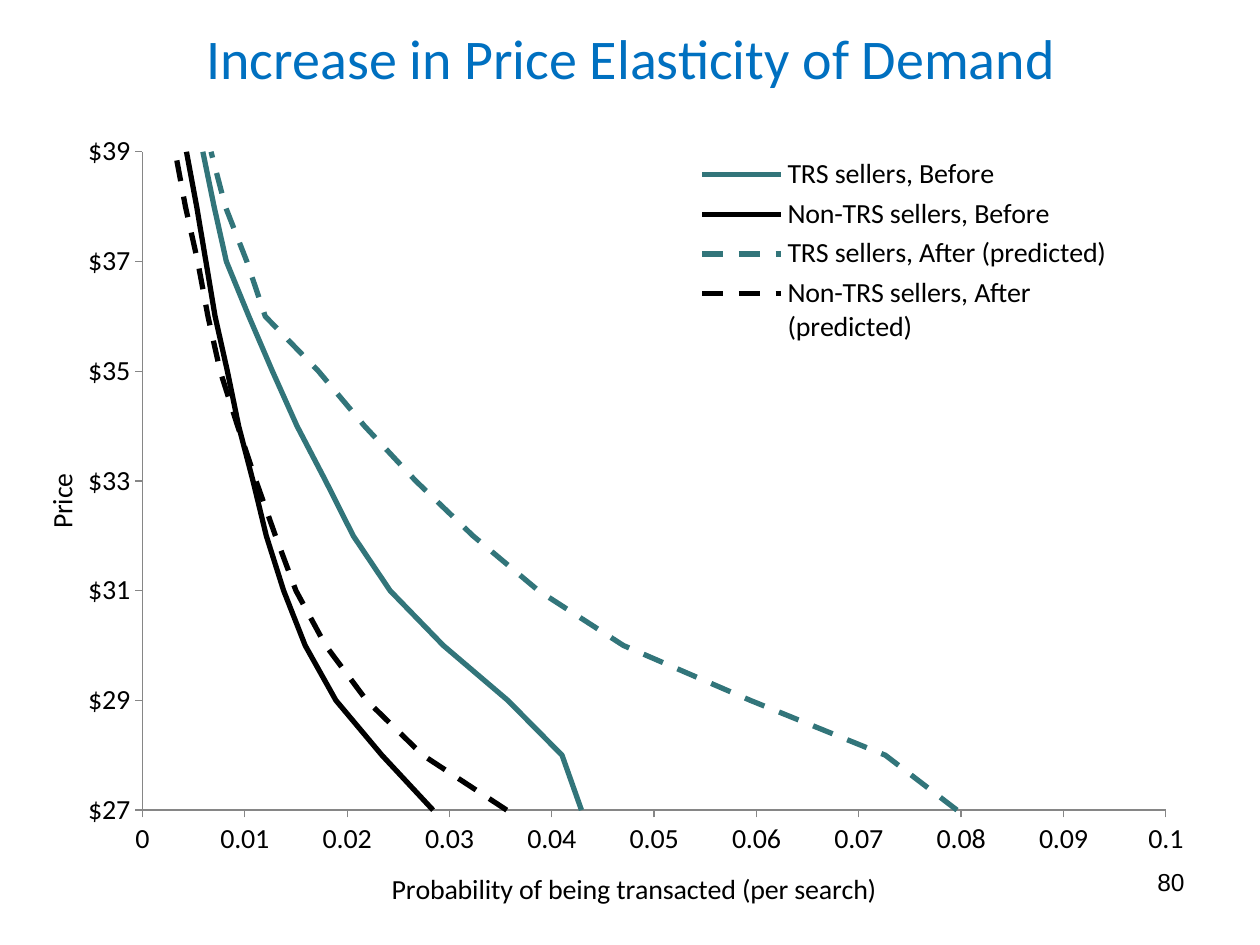
from lxml import etree
from pptx import Presentation
from pptx.chart.data import XyChartData
from pptx.dml.color import RGBColor
from pptx.enum.chart import XL_AXIS_CROSSES as Cross
from pptx.enum.chart import XL_CHART_TYPE as Kind
from pptx.enum.chart import XL_LEGEND_POSITION as Side
from pptx.enum.chart import XL_TICK_MARK as Tick
from pptx.enum.dml import MSO_LINE as Dash
from pptx.enum.text import MSO_ANCHOR as Anchor
from pptx.enum.text import PP_ALIGN as Align
from pptx.oxml.ns import qn
from pptx.util import Inches, Pt

COLORS = {"title": "0070C0", "text": "000000", "axis": "868686",
          "trs": "32757A", "non": "000000"}
PRICES = range(24, 59)
CURVES = [
    ("TRS sellers, Before", "trs", False,
     [47, 47, 44, 42.9, 41, 35.7, 29.4, 24.2, 20.6, 17.9, 15.1, 12.7, 10.4,
      8.2, 7, 5.9, 5, 4, 3, 2, 1, 1, 1, 1]),
    ("Non-TRS sellers, Before", "non", False,
     [52, 42, 34, 28.4, 23.4, 18.9, 15.9, 13.8, 12.1, 10.8, 9.4, 8.3, 7.1,
      6.2, 5.3, 4.3, 3, 2, 2, 1, 1, 1, 1, 1]),
    ("TRS sellers, After (predicted)", "trs", True,
     [92, 87, 83, 79.6, 72.6, 59.4, 47, 38.7, 32.3, 26.7, 21.7, 17.2, 12,
      10.2, 8.1, 6.7, 5, 4, 2, 1, 1, 1]),
    ("Non-TRS sellers, After (predicted)", "non", True,
     [69, 54, 44, 35.6, 27.4, 21.9, 17.9, 15, 13, 11.1, 9.3, 7.6, 6.4,
      5.4, 4.2, 3.2, 2, 1, 1, 1, 1]),
]


def color(name):
    return RGBColor.from_string(COLORS[name])


def style(font, size=16, face="Calibri", fill="text"):
    font.size, font.name, font.bold = Pt(size), face, False
    font.color.rgb = color(fill)


def add_text(slide, box, text, align=Align.LEFT, anchor=Anchor.TOP, **form):
    frame = slide.shapes.add_textbox(*map(Inches, box)).text_frame
    frame.word_wrap = True
    frame.vertical_anchor = anchor
    par = frame.paragraphs[0]
    par.alignment = align
    run = par.add_run()
    run.text = text
    style(run.font, **form)


def set_layout(node, index, inner=False, **parts):
    for old in node.findall(qn("c:layout")):
        node.remove(old)
    layout = etree.Element(qn("c:layout"))
    manual = etree.SubElement(layout, qn("c:manualLayout"))
    if inner:
        etree.SubElement(manual, qn("c:layoutTarget")).set("val", "inner")
    for key in ("x", "y"):
        etree.SubElement(manual, qn(f"c:{key}Mode")).set("val", "edge")
    for key, val in parts.items():
        etree.SubElement(manual, qn(f"c:{key}")).set("val", str(val))
    node.insert(index, layout)


def set_axis(axis, text, low, high, step, form, x, y, turn=0):
    axis.minimum_scale, axis.maximum_scale = low, high
    axis.major_unit = step
    axis.has_major_gridlines = False
    axis.major_tick_mark, axis.minor_tick_mark = Tick.OUTSIDE, Tick.NONE
    axis.crosses = Cross.MINIMUM
    axis.format.line.color.rgb = color("axis")
    axis.format.line.width = Pt(0.75)
    style(axis.tick_labels.font)
    axis.tick_labels.number_format = form
    axis.tick_labels.number_format_is_linked = False
    title = axis.axis_title
    run = title.text_frame.paragraphs[0].add_run()
    run.text = text
    style(run.font)
    node = title._element
    node.find(".//" + qn("a:bodyPr")).set("rot", str(turn * 60000))
    set_layout(node, 1, x=x, y=y)


def add_curves(slide, box):
    data = XyChartData()
    for name, _, _, odds in CURVES:
        row = data.add_series(name)
        full = odds + [0] * (len(PRICES) - len(odds))
        for odd, price in zip(full, PRICES):
            row.add_data_point(round(odd / 1000, 4), price)
    chart = slide.shapes.add_chart(
        Kind.XY_SCATTER_LINES_NO_MARKERS, *map(Inches, box), data).chart
    style(chart.font, size=10, face="Arial")
    chart.has_title = False
    plot = chart.plots[0]
    plot.vary_by_categories = False
    for row, (_, hue, dashed, _) in zip(plot.series, CURVES):
        row.smooth = False
        line = row.format.line
        line.color.rgb = color(hue)
        line.width = Pt(3)
        if dashed:
            line.dash_style = Dash.DASH
    set_axis(chart.category_axis, "Probability of being transacted (per search)",
             0, 0.1, 0.01, "General", 0.3, 0.95)
    set_axis(chart.value_axis, "Price", 27, 39, 2, '"$"#,##0',
             0, 0.45, turn=-90)
    chart.has_legend = True
    legend = chart.legend
    legend.position = Side.RIGHT
    legend.include_in_layout = False
    style(legend.font)
    set_layout(legend._element, 1, x=0.56, y=0.05, w=0.37, h=0.25)
    area = chart._chartSpace.find(".//" + qn("c:plotArea"))
    set_layout(area, 0, inner=True, x=0.09, y=0.05, w=0.88, h=0.83)


def main():
    deck = Presentation()
    deck.slide_width, deck.slide_height = Inches(10), Inches(7.5)
    slide = deck.slides.add_slide(deck.slide_layouts[6])
    add_text(slide, (0.51, 0, 9, 0.91), "Increase in Price Elasticity of Demand",
             align=Align.CENTER, anchor=Anchor.MIDDLE, size=32, fill="title")
    add_text(slide, (7.17, 6.83, 2.33, 0.52), "80",
             align=Align.RIGHT, size=14, face="Arial")
    add_curves(slide, (0.3, 0.89, 9.23, 6.38))
    deck.save("out.pptx")


if __name__ == "__main__":
    main()
